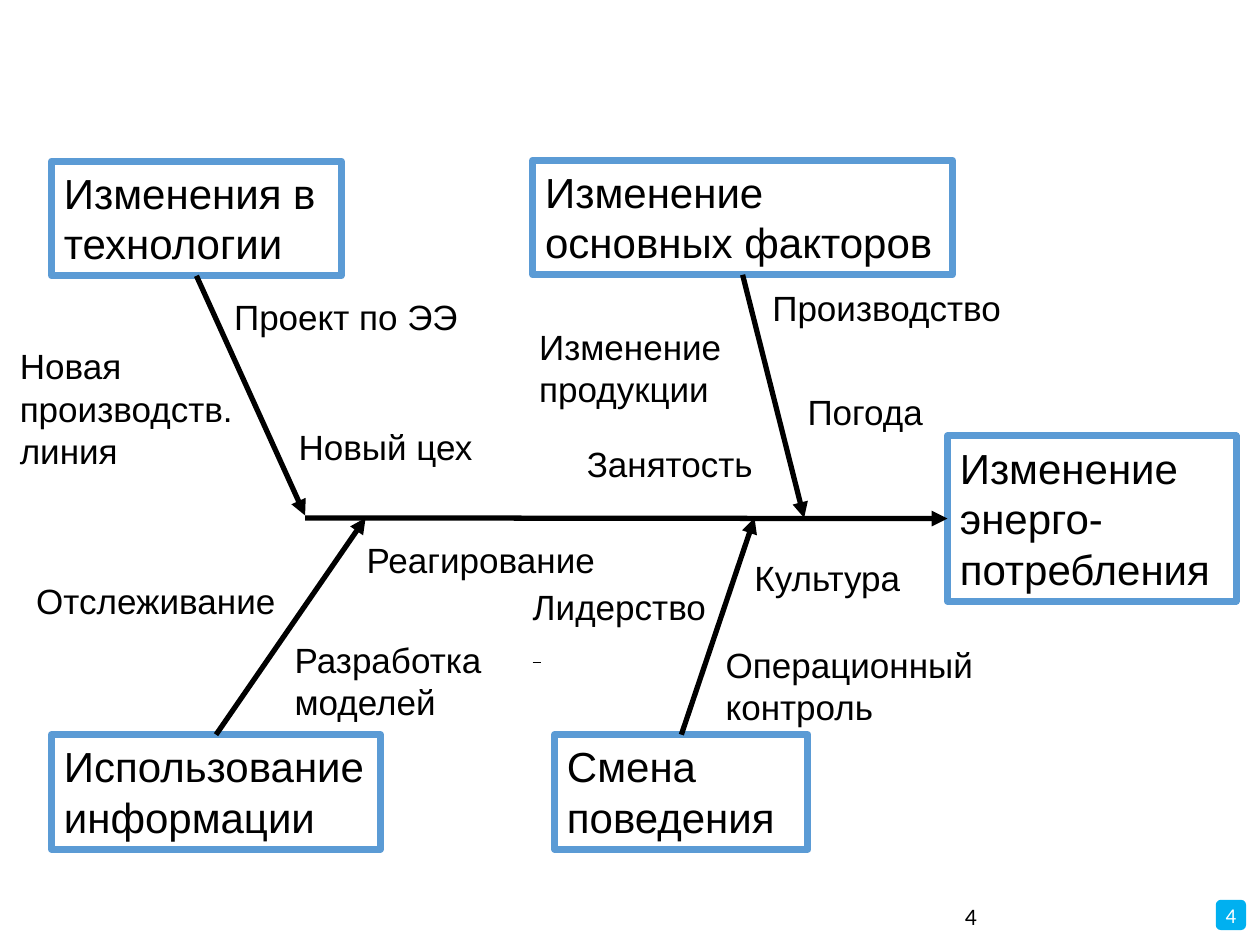
from lxml import etree
from pptx import Presentation
from pptx.dml.color import RGBColor
from pptx.enum.shapes import MSO_CONNECTOR, MSO_SHAPE
from pptx.enum.text import MSO_ANCHOR, MSO_AUTO_SIZE, PP_ALIGN
from pptx.oxml.ns import qn
from pptx.util import Cm, Pt

COLORS = {"text": "000000", "frame": "5B9BD5", "badge": "00B0F0", "white": "FFFFFF"}
TOP, BOTTOM, LEFT = 0, 2, 1  # connection sites of a rectangle
SPINE_Y = 10.44
NBSP = chr(160)


def rgb(name):
    return RGBColor.from_string(COLORS[name])


def add_text(p, text, size=20, font="Arial", color="text", underline=None):
    r = p.add_run()
    r.text = text
    r.font.size = Pt(size)
    r.font.name = font
    r.font.color.rgb = rgb(color)
    r.font.underline = underline
    return r


class Fishbone:
    """Holds the line style and the current slide."""

    frame_width = Pt(4)
    bone_width = Pt(3)

    def __init__(self, s):
        self.s = s

    def box(self, text, x, y, w, h=2.31):
        sp = self.s.shapes.add_shape(MSO_SHAPE.RECTANGLE, Cm(x), Cm(y), Cm(w), Cm(h))
        sp.shadow.inherit = False
        sp.fill.background()
        sp.line.color.rgb = rgb("frame")
        sp.line.width = self.frame_width
        tf = sp.text_frame
        tf.word_wrap = True
        tf.auto_size = MSO_AUTO_SIZE.SHAPE_TO_FIT_TEXT
        tf.vertical_anchor = MSO_ANCHOR.TOP
        p = tf.paragraphs[0]
        p.alignment = PP_ALIGN.LEFT
        add_text(p, text, size=24)
        return sp

    def label(self, text, x, y, w, lines=1, **fmt):
        sp = self.s.shapes.add_textbox(Cm(x), Cm(y), Cm(w), Cm(0.26 + 0.85 * lines))
        tf = sp.text_frame
        tf.word_wrap = True
        tf.auto_size = MSO_AUTO_SIZE.SHAPE_TO_FIT_TEXT
        p = tf.paragraphs[0]
        add_text(p, text, **fmt)
        return p

    def arrow(self, x1, y1, x2, y2):
        c = self.s.shapes.add_connector(
            MSO_CONNECTOR.STRAIGHT, Cm(x1), Cm(y1), Cm(x2), Cm(y2))
        c.line.color.rgb = rgb("text")
        c.line.width = self.bone_width
        etree.SubElement(c.line._get_or_add_ln(), qn("a:tailEnd"), type="triangle")
        etree.SubElement(c._element.spPr, qn("a:effectLst"))
        return c

    def badge(self, text, x, y, side):
        sp = self.s.shapes.add_shape(
            MSO_SHAPE.ROUNDED_RECTANGLE, Cm(x), Cm(y), Cm(side), Cm(side))
        sp.shadow.inherit = False
        sp.fill.solid()
        sp.fill.fore_color.rgb = rgb("badge")
        sp.line.fill.background()
        tf = sp.text_frame
        tf.margin_left = tf.margin_right = tf.margin_top = tf.margin_bottom = 0
        tf.vertical_anchor = MSO_ANCHOR.MIDDLE
        p = tf.paragraphs[0]
        p.alignment = PP_ALIGN.CENTER
        add_text(p, text, size=12, font="Calibri", color="white")


# text, x, y, width, connection site, x and y of the arrow tip
CAUSES = [
    ("Смена поведения", 11.18, 14.81, 5.11, TOP, 15.21, SPINE_Y),
    ("Использование информации", 1.04, 14.81, 6.63, TOP, 7.37, SPINE_Y),
    ("Изменение основных факторов", 10.74, 3.23, 8.46, BOTTOM, 16.21, SPINE_Y),
    ("Изменения в технологии", 1.04, 3.25, 5.84, BOTTOM, 6.15, 10.39),
]

# text, x, y, width, lines
FACTORS = [
    ("Проект по ЭЭ", 4.47, 5.84, 5.61, 1),
    ("Новая производств.линия", 0.15, 6.83, 5.13, 3),
    ("Операционный контроль", 14.38, 12.85, 6.3, 2),
    ("Культура", 14.96, 11.1, 3.81, 1),
    ("Занятость", 11.58, 8.79, 4.29, 1),
    ("Изменение продукции", 10.62, 6.43, 4.45, 2),
    ("Погода", 16.03, 7.75, 4.06, 1),
    ("Производство", 15.32, 5.66, 5.72, 1),
    ("Новый цех", 5.77, 8.46, 4.27, 1),
    ("Отслеживание", 0.48, 11.56, 5.72, 1),
    ("Разработка моделей", 5.69, 12.75, 4.52, 2),
    ("Реагирование", 7.14, 10.74, 5.31, 1),
]


def main():
    prs = Presentation()
    prs.slide_width, prs.slide_height = Cm(25.4), Cm(19.05)
    d = Fishbone(prs.slides.add_slide(prs.slide_layouts[6]))

    d.badge("4", 24.51, 18.14, 0.61)
    d.label("4", 19.2, 18.06, 6.2, size=13.5, font="Calibri")

    effect = d.box("Изменение энерго-потребления", 19.1, 8.79, 5.82, 3.33)
    for text, x, y, w, site, tip_x, tip_y in CAUSES:
        cause = d.box(text, x, y, w)
        d.arrow(x, y, tip_x, tip_y).begin_connect(cause, site)
    d.arrow(6.15, SPINE_Y, 19.1, SPINE_Y).end_connect(effect, LEFT)

    for factor in FACTORS:
        d.label(*factor)
    leadership = d.label("Лидерство", 10.49, 11.68, 4.01)
    add_text(leadership, " " + NBSP, size=18, underline=True)

    prs.save("out.pptx")


if __name__ == "__main__":
    main()
